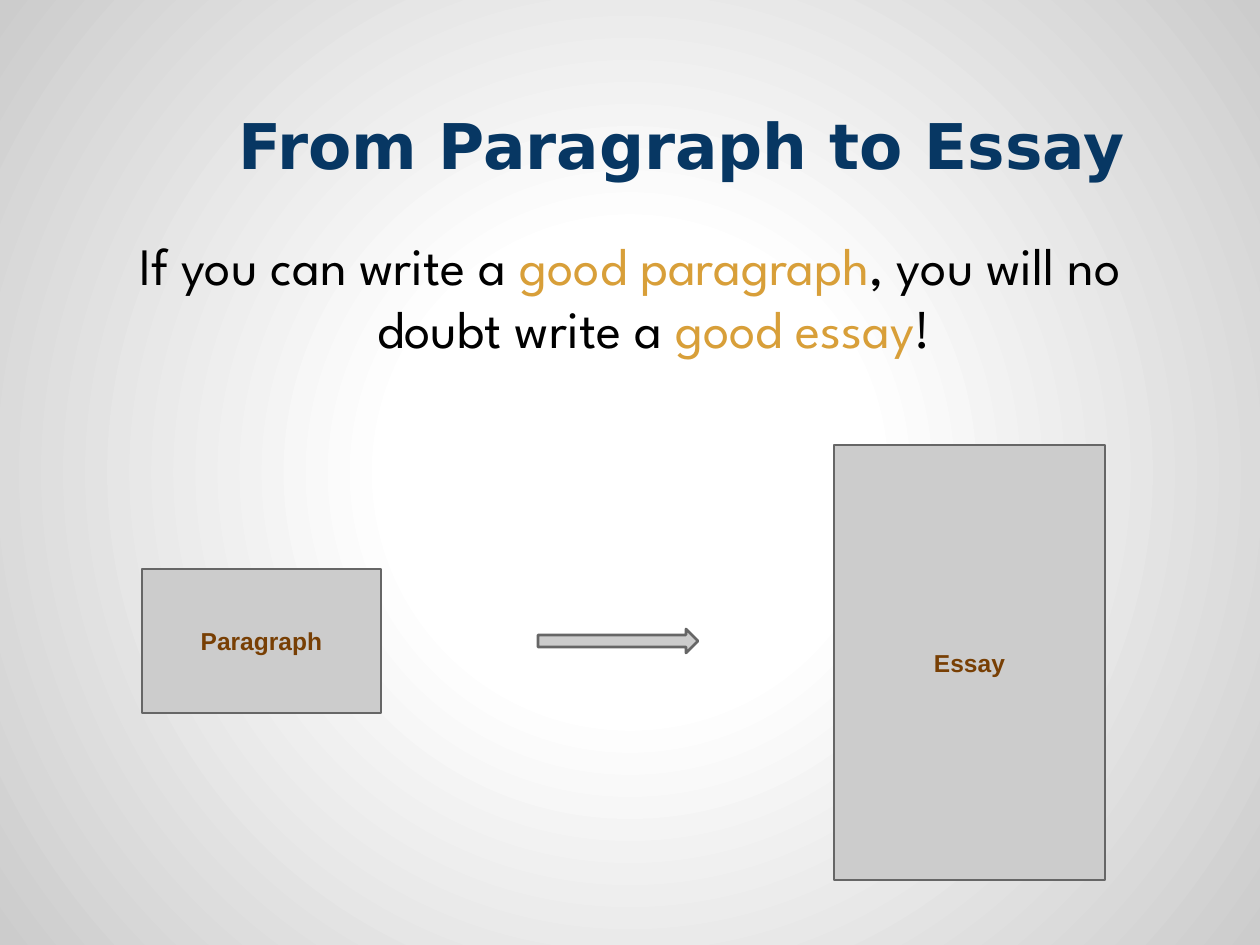
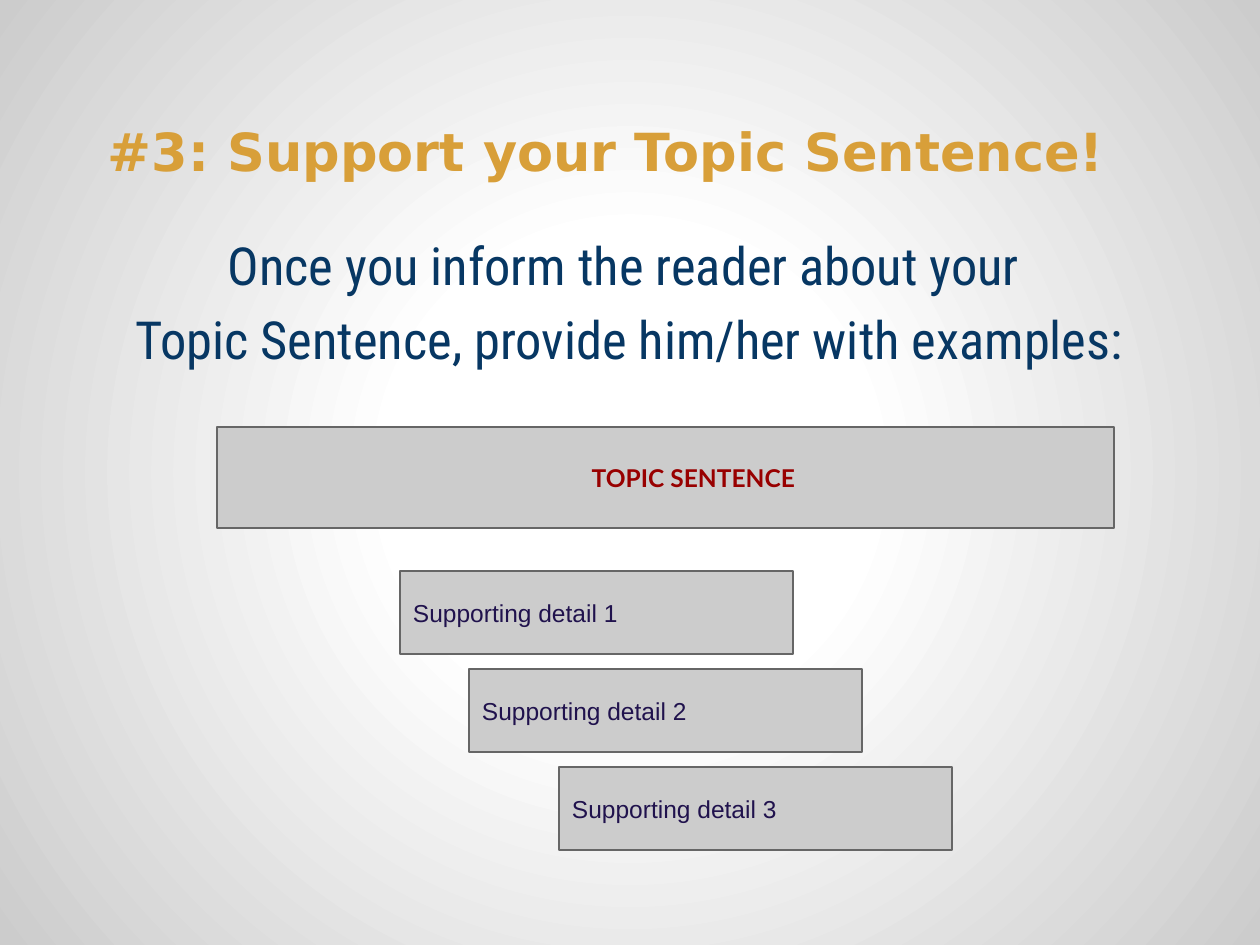
import pptx
import pptx.dml.color
import pptx.enum.shapes
import pptx.enum.text
import pptx.oxml
import pptx.oxml.ns
import pptx.util

SCALE = pptx.util.Inches(1) / 126
SLIDE_SIZE = (1260, 945)
TITLE_BOX = (63, 38, 1134, 157)
BODY_BOX = (63, 220, 1134, 684)
DIAGRAM_BOX = (142, 427, 972, 453)
INSET = 13
HANGING = 48

COLORS = {
    "white": "FFFFFF",
    "grey": "CCCCCC",
    "outline": "666666",
    "navy": "073763",
    "gold": "D89F39",
    "black": "000000",
    "brown": "783F04",
    "red": "980000",
    "violet": "20124D",
}

ALIGN = pptx.enum.text.PP_ALIGN
ANCHOR = pptx.enum.text.MSO_ANCHOR
SHAPE = pptx.enum.shapes.MSO_SHAPE


def px(length):
    return round(length * SCALE)


def color(name):
    return pptx.dml.color.RGBColor.from_string(COLORS[name])


def place(shape, box):
    shape.left, shape.top, shape.width, shape.height = map(px, box)


def setup_frame(shape, anchor):
    frame = shape.text_frame
    frame.word_wrap = True
    frame.auto_size = pptx.enum.text.MSO_AUTO_SIZE.NONE
    frame.vertical_anchor = anchor
    frame.margin_left = frame.margin_right = px(INSET)
    frame.margin_top = frame.margin_bottom = px(INSET)
    return frame


def format_paragraph(paragraph, align, margin=0, indent=0):
    paragraph.alignment = align
    properties = paragraph._p.get_or_add_pPr()
    properties.set("marL", str(px(margin)))
    properties.set("indent", str(px(indent)))


def add_run(paragraph, text, font, size, color_name, bold=False):
    run = paragraph.add_run()
    run.text = text
    run.font.name = font
    run.font.size = pptx.util.Pt(size)
    run.font.bold = bold
    run.font.color.rgb = color(color_name)


def set_background(master):
    master.background.fill.gradient()
    gradient = master.element.find(".//" + pptx.oxml.ns.qn("a:gradFill"))
    stops = "".join(
        f'<a:gs pos="{position * 1000}"><a:srgbClr val="{COLORS[name]}"/></a:gs>'
        for position, name in ((0, "white"), (30, "white"), (100, "grey"))
    )
    radial = pptx.oxml.parse_xml(
        f'<a:gradFill {pptx.oxml.ns.nsdecls("a")} rotWithShape="1">'
        f'<a:gsLst>{stops}</a:gsLst><a:path path="circle">'
        '<a:fillToRect l="50000" t="50000" r="50000" b="50000"/>'
        "</a:path></a:gradFill>"
    )
    gradient.getparent().replace(gradient, radial)


def add_title(slide, box, text, size, color_name, indent):
    title = slide.shapes.title
    place(title, box)
    paragraph = setup_frame(title, ANCHOR.BOTTOM).paragraphs[0]
    format_paragraph(paragraph, ALIGN.LEFT, indent=indent)
    add_run(paragraph, text, "DejaVu Sans", size, color_name, bold=True)


def add_body(slide, box, font, paragraphs):
    body = slide.shapes.add_textbox(*map(px, box))
    frame = setup_frame(body, ANCHOR.TOP)
    for index, runs in enumerate(paragraphs):
        paragraph = frame.add_paragraph() if index else frame.paragraphs[0]
        format_paragraph(paragraph, ALIGN.CENTER, HANGING, -HANGING)
        paragraph.space_before = pptx.util.Pt(6)
        for text, color_name in runs:
            add_run(paragraph, text, font, 30, color_name)


def add_block(slide, box, preset=SHAPE.RECTANGLE):
    block = slide.shapes.add_shape(preset, *map(px, box))
    block.shadow.inherit = False
    block.fill.solid()
    block.fill.fore_color.rgb = color("grey")
    block.line.color.rgb = color("outline")
    block.line.width = pptx.util.Pt(1.5)
    return block


def add_label_block(slide, box, text, color_name, font="Arial", bold=True,
                    align=ALIGN.CENTER, margin=0):
    frame = setup_frame(add_block(slide, box), ANCHOR.MIDDLE)
    paragraph = frame.paragraphs[0]
    format_paragraph(paragraph, align, margin)
    add_run(paragraph, text, font, 14, color_name, bold)


def add_growth_diagram(slide, box):
    left, top, width, height = box
    essay_width = 271
    essay_left = left + 692
    add_label_block(slide, (left, top + 142, 239, 144), "Paragraph", "brown")
    add_label_block(slide, (essay_left, top + 18, essay_width, height - 18),
                    "Essay", "brown")
    add_block(slide, (left + 396, top + 202, 160, 24), SHAPE.RIGHT_ARROW)


def add_support_diagram(slide, box):
    left, top, width, height = box
    topic_left = 75
    add_label_block(slide, (left + topic_left, top, width - topic_left, 101),
                    "TOPIC SENTENCE", "red", font="Lato", margin=56)
    for index, offset in enumerate((258, 327, 417)):
        detail_box = (left + offset, top + 144 + 98 * index, 393, 83)
        add_label_block(slide, detail_box, f"Supporting detail {index + 1}",
                        "violet", bold=False, align=ALIGN.LEFT)


def add_slide(presentation):
    return presentation.slides.add_slide(presentation.slide_layouts[5])


def build_essay_slide(presentation):
    slide = add_slide(presentation)
    add_title(slide, TITLE_BOX, "From Paragraph to Essay", 36, "navy", 162)
    add_body(slide, BODY_BOX, "League Spartan", [[
        ("If you can write a ", "black"),
        ("good paragraph", "gold"),
        (", you will no doubt write a ", "black"),
        ("good essay", "gold"),
        ("!", "black"),
    ]])
    add_growth_diagram(slide, DIAGRAM_BOX)


def build_support_slide(presentation):
    slide = add_slide(presentation)
    add_title(slide, TITLE_BOX, "#3: Support your Topic Sentence!", 30, "gold", 32)
    add_body(slide, BODY_BOX, "Roboto Condensed", [
        [("Once you inform the reader about your ", "navy")],
        [("Topic Sentence, provide him/her with examples:", "navy")],
    ])
    add_support_diagram(slide, DIAGRAM_BOX)


def main():
    presentation = pptx.Presentation()
    presentation.slide_width, presentation.slide_height = map(px, SLIDE_SIZE)
    set_background(presentation.slide_master)
    build_essay_slide(presentation)
    build_support_slide(presentation)
    presentation.save("out.pptx")


if __name__ == "__main__":
    main()
